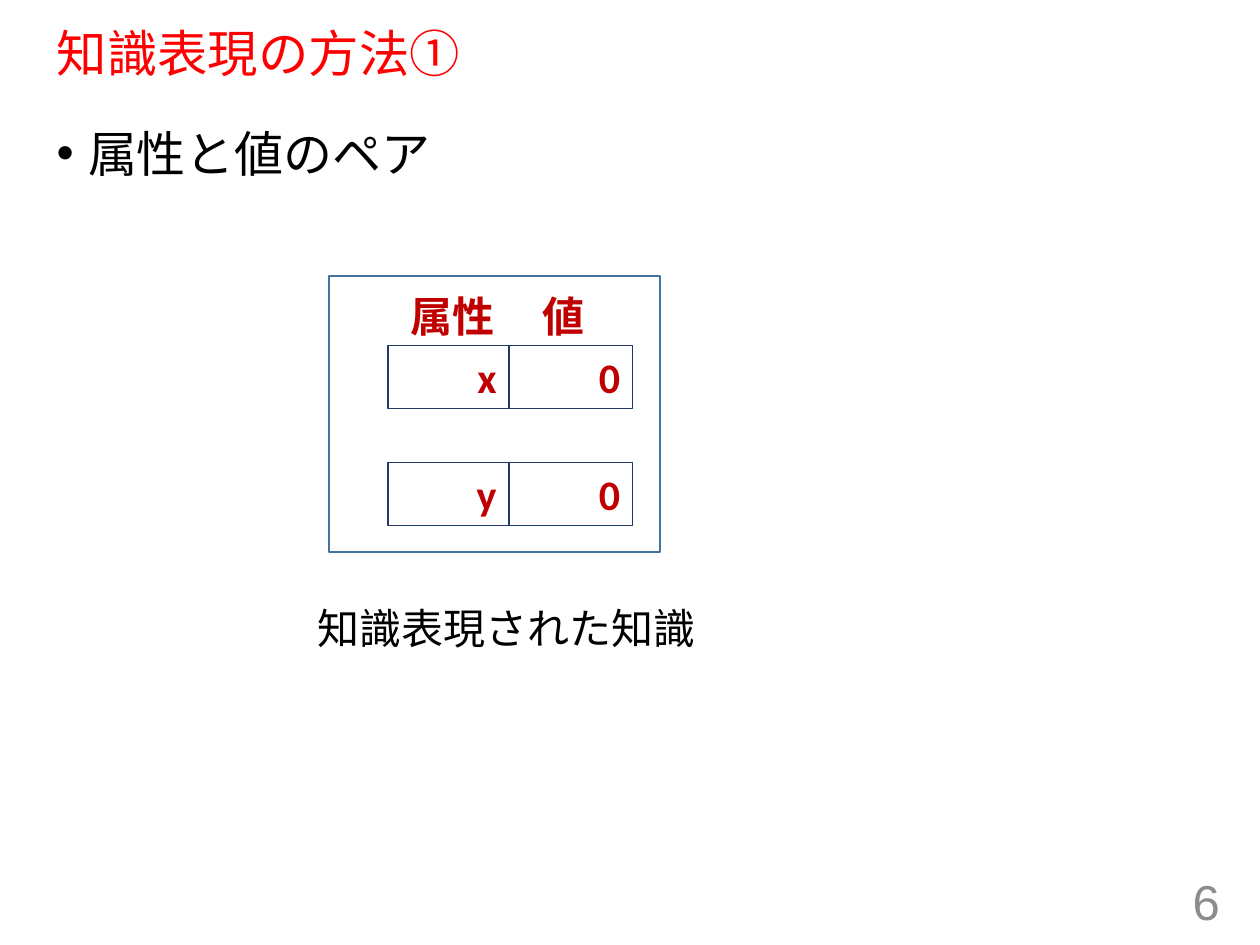
from lxml import etree
from pptx import Presentation
from pptx.dml.color import RGBColor
from pptx.enum.shapes import MSO_SHAPE
from pptx.enum.text import MSO_ANCHOR, PP_ALIGN
from pptx.oxml.ns import qn
from pptx.util import Emu, Pt

RECTANGLE = MSO_SHAPE.RECTANGLE
TOP, MIDDLE = MSO_ANCHOR.TOP, MSO_ANCHOR.MIDDLE
LEFT, RIGHT = PP_ALIGN.LEFT, PP_ALIGN.RIGHT
EMU_PER_PX = 9144  # 100 px to the inch
TITLE_ONLY = 5
RED, DARK_RED, BLACK, GREY = "FF0000", "C00000", "000000", "8C8C8C"
CELL_LINE, FRAME_LINE = "203864", "43739E"


def px(length):
    return Emu(length * EMU_PER_PX)


def color(hex_string):
    return RGBColor.from_string(hex_string)


def write(shape, text, size, font, hex_color, bold=False, align=LEFT, anchor=TOP, wrap=True):
    frame = shape.text_frame
    frame.word_wrap = wrap
    frame.vertical_anchor = anchor
    paragraph = frame.paragraphs[0]
    paragraph.alignment = align
    run = paragraph.add_run()
    run.text = text
    run.font.size = Pt(size)
    run.font.name = font
    run.font.bold = bold
    run.font.color.rgb = color(hex_color)
    return paragraph


def add_text(slide, box, text, size, font, hex_color, **options):
    shape = slide.shapes.add_textbox(*map(px, box))
    return write(shape, text, size, font, hex_color, **options)


def add_rectangle(slide, box, line_color, line_width):
    shape = slide.shapes.add_shape(RECTANGLE, *map(px, box))
    shape.shadow.inherit = False
    shape.fill.background()
    shape.line.color.rgb = color(line_color)
    shape.line.width = Pt(line_width)
    return shape


def add_title(slide, box, text):
    title = slide.shapes.title
    title.left, title.top, title.width, title.height = map(px, box)
    paragraph = write(title, text, 28.8, "Arial", RED, anchor=MIDDLE)
    paragraph.line_spacing = 0.9


def add_bullet(slide, box, text):
    paragraph = add_text(slide, box, text, 28, "Arial", BLACK)
    properties = paragraph._p.get_or_add_pPr()
    properties.set("marL", str(px(25)))
    properties.set("indent", str(-px(25)))
    etree.SubElement(properties, qn("a:buFont"), typeface="Arial")
    etree.SubElement(properties, qn("a:buChar"), char="•")


def add_attribute_panel(slide, box, pairs):
    """Frame with the attribute and value headings over one row of cells per pair."""
    left, top, width, height = box
    cell_width, cell_height, row_step = 96, 50, 93
    for row, pair in enumerate(pairs):
        for column, text in enumerate(pair):
            cell_box = (left + 47 + column * cell_width, top + 55 + row * row_step,
                        cell_width + 2 * column, cell_height)
            cell = add_rectangle(slide, cell_box, CELL_LINE, 0.75)
            write(cell, text, 24, "Calibri", DARK_RED, bold=True, align=RIGHT)
    add_rectangle(slide, box, FRAME_LINE, 1)
    for text, offset, heading_width in (("属性", 55, 88), ("値", 160, 58)):
        add_text(slide, (left + offset, top + 7, heading_width, 50), text,
                 24, "Calibri", DARK_RED, bold=True, wrap=False)


def main():
    presentation = Presentation()
    presentation.slide_width, presentation.slide_height = px(1000), px(750)
    slide = presentation.slides.add_slide(presentation.slide_layouts[TITLE_ONLY])
    add_title(slide, (35, 19, 925, 51), "知識表現の方法①")
    add_bullet(slide, (35, 93, 925, 583), "属性と値のペア")
    add_attribute_panel(slide, (261, 219, 263, 219), [("x", "0"), ("y", "0")])
    add_text(slide, (242, 473, 323, 50), "知識表現された知識", 24, "Calibri", BLACK, wrap=False)
    add_text(slide, (753, 695, 225, 40), "6", 28, "Arial", GREY, align=RIGHT, anchor=MIDDLE)
    presentation.save("out.pptx")


if __name__ == "__main__":
    main()
